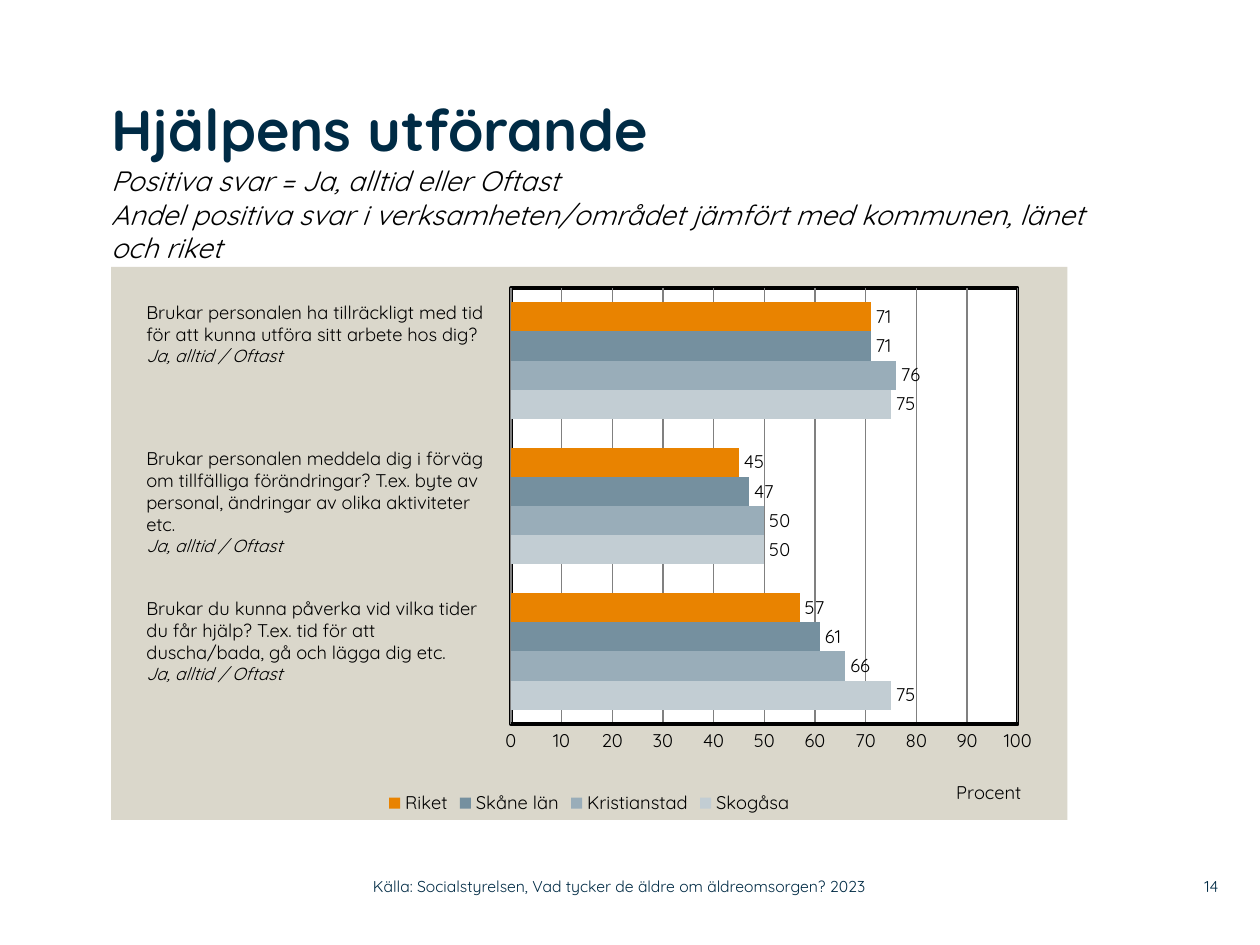
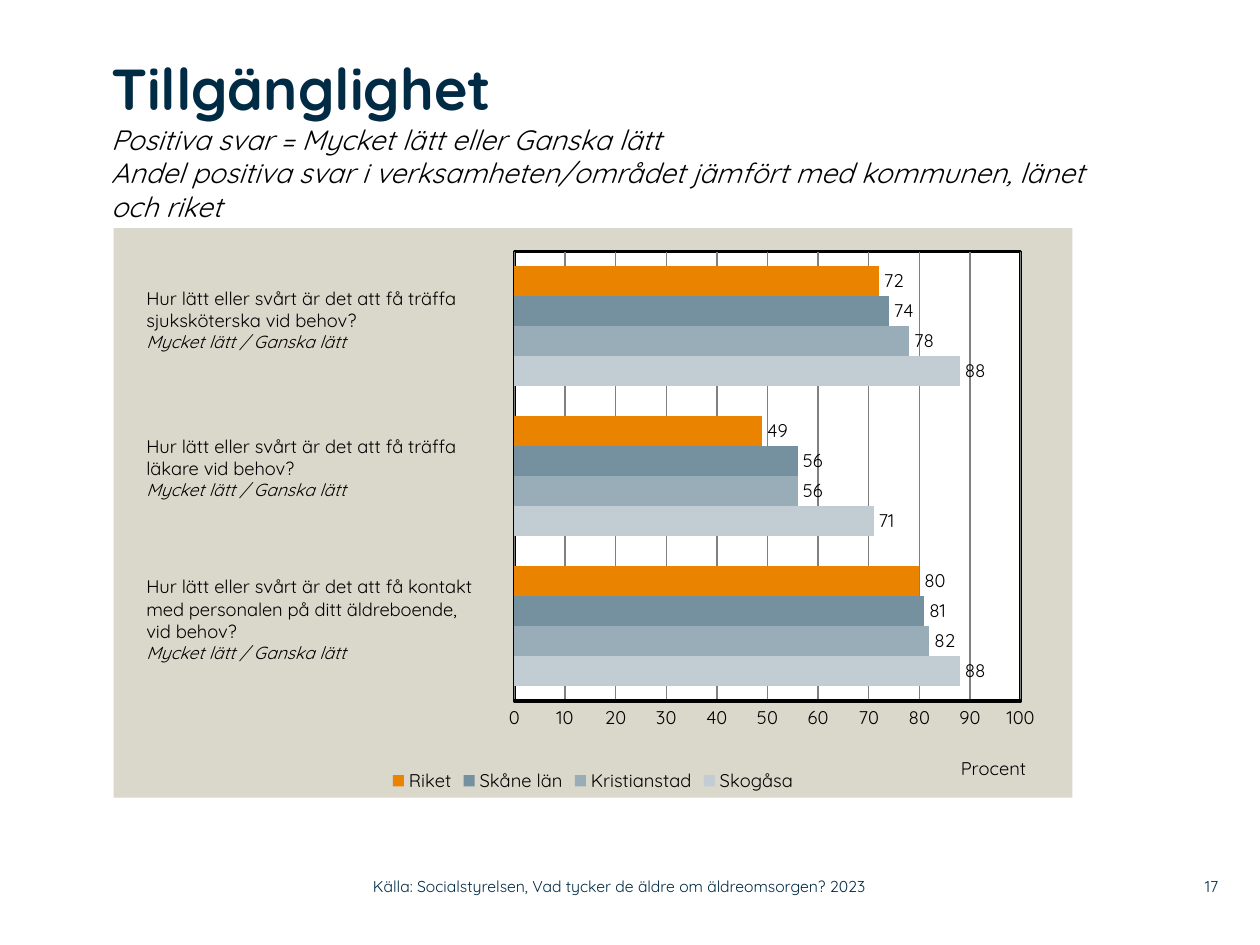
import pptx
import pptx.chart.data
import pptx.dml.color
import pptx.enum.chart
import pptx.enum.text
import pptx.oxml
import pptx.oxml.ns
import pptx.util
from pptx.util import Cm

RGBColor = pptx.dml.color.RGBColor
NAVY = RGBColor(0x00, 0x2B, 0x45)
BLACK = RGBColor(0x00, 0x00, 0x00)
WHITE = RGBColor(0xFF, 0xFF, 0xFF)
SAND = RGBColor(0xDA, 0xD7, 0xCB)
GRID_GREY = RGBColor(0x80, 0x80, 0x80)
AREA_COLORS = {
    "Skogåsa": RGBColor(0xC2, 0xCD, 0xD3),
    "Kristianstad": RGBColor(0x99, 0xAD, 0xB9),
    "Skåne län": RGBColor(0x75, 0x90, 0x9F),
    "Riket": RGBColor(0xE9, 0x83, 0x00),
}
SOURCE = "Källa: Socialstyrelsen, Vad tycker de äldre om äldreomsorgen? 2023"
COMPARISON = "Andel positiva svar i verksamheten/området jämfört med kommunen, länet och riket"

PAGES = [
    {
        "number": 14,
        "heading": "Hjälpens utförande",
        "heading_top": 1.9,
        "positive": "Positiva svar = Ja, alltid eller Oftast",
        "answers": "Ja, alltid / Oftast",
        "chart_box": (2.24, 5.38, 19.28, 11.15),
        "plot_box": (0.418, 0.038, 0.53, 0.789),
        "shares": [(75, 50, 75), (66, 50, 76), (61, 47, 71), (57, 45, 71)],
        "questions": [
            (5.94, ["Brukar personalen ha tillräckligt med tid",
                    "för att kunna utföra sitt arbete hos dig?"]),
            (8.89, ["Brukar personalen meddela dig i förväg om tillfälliga förändringar? "
                    "T.ex. byte av personal, ändringar av olika aktiviteter etc."]),
            (11.91, ["Brukar du kunna påverka vid vilka tider",
                     "du får hjälp? T.ex. tid för att",
                     "duscha/bada, gå och lägga dig etc."]),
        ],
    },
    {
        "number": 17,
        "heading": "Tillgänglighet",
        "heading_top": 1.07,
        "positive": "Positiva svar = Mycket lätt eller Ganska lätt",
        "answers": "Mycket lätt / Ganska lätt",
        "chart_box": (2.29, 4.6, 19.33, 11.48),
        "plot_box": (0.418, 0.041, 0.528, 0.789),
        "shares": [(88, 71, 88), (82, 56, 78), (81, 56, 74), (80, 49, 72)],
        "questions": [
            (5.66, ["Hur lätt eller svårt är det att få träffa sjuksköterska vid behov?"]),
            (8.64, ["Hur lätt eller svårt är det att få träffa", "läkare vid behov?"]),
            (11.48, ["Hur lätt eller svårt är det att få kontakt",
                     "med personalen på ditt äldreboende,", "vid behov?"]),
        ],
    },
]


def chart_xml(tag, content):
    return pptx.oxml.parse_xml(
        f'<c:{tag} {pptx.oxml.ns.nsdecls("c", "a")}>{content}</c:{tag}>')


def solid(color):
    return f'<a:solidFill><a:srgbClr val="{color}"/></a:solidFill>'


def set_layout(parent, index, content):
    automatic = parent.find(pptx.oxml.ns.qn("c:layout"))
    if automatic is not None:
        parent.remove(automatic)
    parent.insert(index, chart_xml("layout", f"<c:manualLayout>{content}</c:manualLayout>"))


class SurveyDeck:
    font_name = "Quicksand"
    body_size = 10.5

    def __init__(self):
        self.deck = pptx.Presentation()
        self.deck.slide_width = Cm(25.4)
        self.deck.slide_height = Cm(19.05)
        self.slide = None

    def style(self, font, size, color=BLACK, bold=False, italic=False):
        font.name = self.font_name
        font.size = pptx.util.Pt(size)
        font.color.rgb = color
        font.bold = bold
        font.italic = italic

    def fill_lines(self, frame, lines):
        frame.word_wrap = True
        frame.text = "\n".join(text for text, _ in lines)
        for paragraph, (_, look) in zip(frame.paragraphs, lines):
            paragraph.alignment = pptx.enum.text.PP_ALIGN.LEFT
            self.style(paragraph.font, **look)

    def clear_margins(self, frame):
        frame.margin_left = frame.margin_top = frame.margin_right = frame.margin_bottom = 0

    def add_slide(self):
        self.slide = self.deck.slides.add_slide(self.deck.slide_layouts[5])

    def title(self, top, heading, *subtitles):
        title = self.slide.shapes.title
        title.left, title.top, title.width, title.height = Cm(2.24), Cm(top), Cm(19.79), Cm(3.3)
        frame = title.text_frame
        self.clear_margins(frame)
        frame.auto_size = pptx.enum.text.MSO_AUTO_SIZE.NONE
        frame.vertical_anchor = pptx.enum.text.MSO_ANCHOR.TOP
        subtitle_look = {"size": 16, "italic": True}
        self.fill_lines(frame, [(heading, {"size": 33, "color": NAVY, "bold": True})]
                        + [(text, subtitle_look) for text in subtitles])

    def question(self, top, lines, answers):
        box = self.slide.shapes.add_textbox(Cm(2.7), Cm(top), Cm(7.59), Cm(2.06))
        self.fill_lines(box.text_frame, [(line, {"size": self.body_size}) for line in lines]
                        + [(answers, {"size": 10, "italic": True})])

    def footer(self, left, width, text, alignment):
        frame = self.slide.shapes.add_textbox(
            Cm(left), Cm(17.5), Cm(width), Cm(0.74)).text_frame
        self.clear_margins(frame)
        frame.vertical_anchor = pptx.enum.text.MSO_ANCHOR.MIDDLE
        self.fill_lines(frame, [(text, {"size": 9, "color": NAVY})])
        frame.paragraphs[0].alignment = alignment

    def bar_chart(self, box, plot_box, shares):
        data = pptx.chart.data.CategoryChartData()
        data.categories = ["1", "2", "3"]
        for area, values in zip(AREA_COLORS, shares):
            data.add_series(area, values)
        chart = self.slide.shapes.add_chart(
            pptx.enum.chart.XL_CHART_TYPE.BAR_CLUSTERED, *map(Cm, box), data).chart
        self.style(chart.font, self.body_size)
        chart.has_title = False
        chart.has_legend = True
        chart.legend.position = pptx.enum.chart.XL_LEGEND_POSITION.BOTTOM
        chart.legend.include_in_layout = False
        self.style(chart.legend.font, self.body_size)
        self.bars(chart.plots[0])
        chart.category_axis.visible = False
        self.percent_axis(chart.value_axis)
        self.chart_areas(chart, plot_box)

    def bars(self, plot):
        plot.gap_width = 100
        plot.overlap = 0
        plot.vary_by_categories = False
        plot.has_data_labels = True
        plot.data_labels.show_value = True
        plot.data_labels.position = pptx.enum.chart.XL_LABEL_POSITION.OUTSIDE_END
        self.style(plot.data_labels.font, self.body_size)
        for series in plot.series:
            series.format.fill.solid()
            series.format.fill.fore_color.rgb = AREA_COLORS[series.name]

    def percent_axis(self, axis):
        axis.minimum_scale, axis.maximum_scale, axis.major_unit = 0, 100, 10
        axis.major_tick_mark = axis.minor_tick_mark = pptx.enum.chart.XL_TICK_MARK.NONE
        self.style(axis.tick_labels.font, self.body_size)
        axis.format.line.color.rgb = BLACK
        axis.format.line.width = pptx.util.Pt(2)
        axis.has_major_gridlines = True
        axis.major_gridlines.format.line.color.rgb = GRID_GREY
        axis.major_gridlines.format.line.width = pptx.util.Pt(0.75)
        frame = axis.axis_title.text_frame
        frame.text = "Procent"
        self.style(frame.paragraphs[0].font, self.body_size)
        set_layout(axis.axis_title.element, 1,
                   '<c:xMode val="edge"/><c:yMode val="edge"/>'
                   '<c:x val="0.88"/><c:y val="0.92"/>')

    def chart_areas(self, chart, plot_box):
        frame = chart.element.find(pptx.oxml.ns.qn("c:chart"))
        frame.addnext(chart_xml("spPr", solid(SAND) + "<a:ln><a:noFill/></a:ln>"))
        plot_area = frame.find(pptx.oxml.ns.qn("c:plotArea"))
        sizes = "".join(f'<c:{key} val="{value}"/>' for key, value in zip("xywh", plot_box))
        set_layout(plot_area, 0, '<c:layoutTarget val="inner"/><c:xMode val="edge"/>'
                   '<c:yMode val="edge"/>' + sizes)
        border = f'<a:ln w="{pptx.util.Pt(2)}">{solid(BLACK)}</a:ln>'
        plot_area.append(chart_xml("spPr", solid(WHITE) + border))


def main():
    survey = SurveyDeck()
    for page in PAGES:
        survey.add_slide()
        survey.bar_chart(page["chart_box"], page["plot_box"], page["shares"])
        survey.title(page["heading_top"], page["heading"], page["positive"], COMPARISON)
        for top, lines in page["questions"]:
            survey.question(top, lines, page["answers"])
        survey.footer(23.37, 1.19, str(page["number"]), pptx.enum.text.PP_ALIGN.RIGHT)
        survey.footer(7.52, 11.25, SOURCE, pptx.enum.text.PP_ALIGN.LEFT)
    survey.deck.save("out.pptx")


if __name__ == "__main__":
    main()
